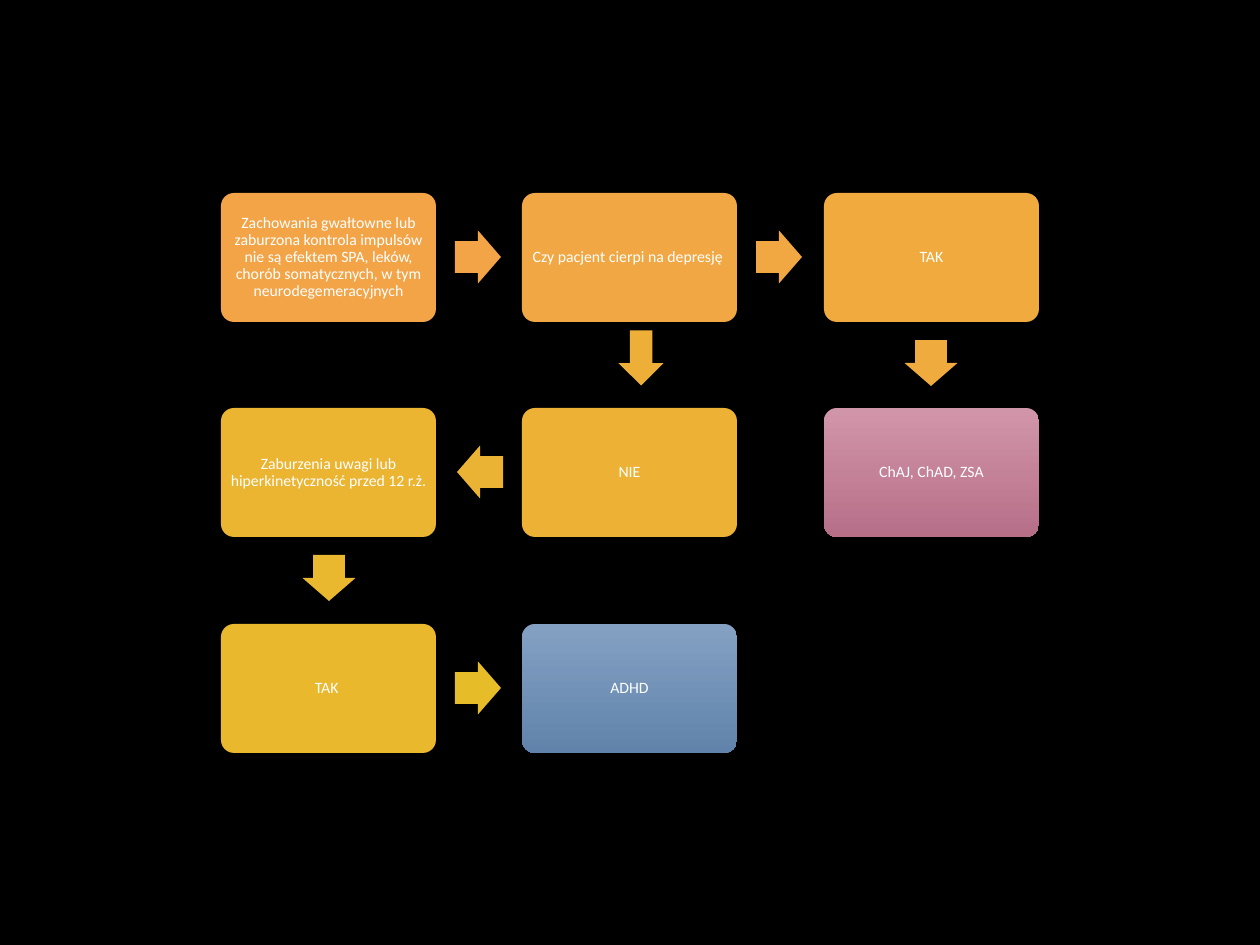
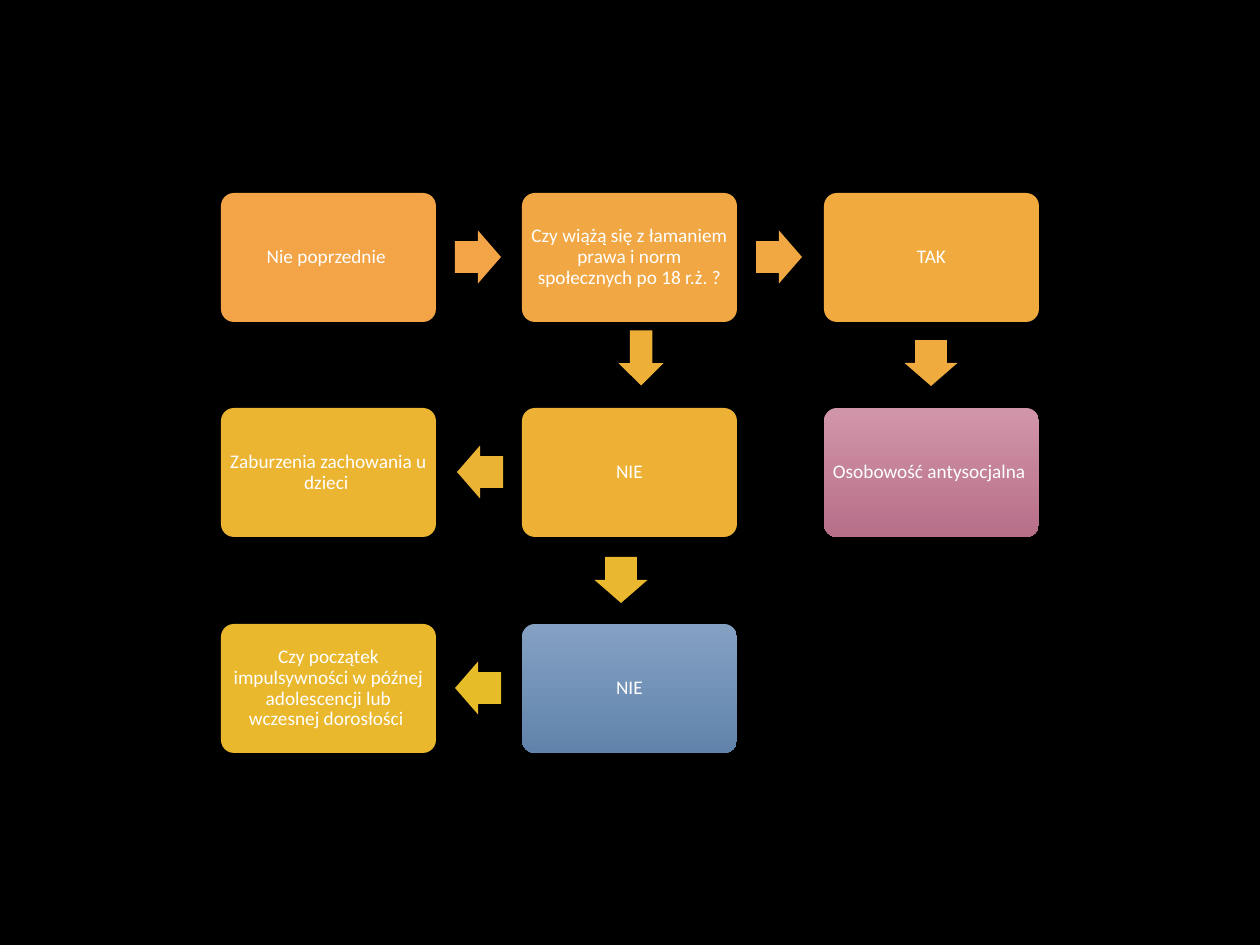
import pptx
import pptx.util
import pptx.dml.color
import pptx.enum.shapes
import pptx.enum.text

PX = 914400 / 126
MSO = pptx.enum.shapes.MSO_SHAPE
BOX_W, BOX_H = 215, 129
INSET = 5

BACKGROUND = "000000"
TEXT = "FFFFFF"
ROSE = ("D195A9", "B76F88")
BLUE = ("84A1C3", "6183AB")

# Column, row and fill of each step, in reading order of the flow.
STEPS = [
    (0, 0, "F3A447"), (1, 0, "F1A743"), (2, 0, "F0AA3E"), (2, 1, ROSE),
    (1, 1, "EDB135"), (0, 1, "EBB431"), (0, 2, "E9B82D"), (1, 2, BLUE),
]

# Centre x, centre y, rotation and fill of the arrows on both slides.
ARROWS = [
    (478, 257, 0, "F3A447"), (779, 257, 0, "F1A742"),
    (931, 363, 90, "EFAB3D"), (480, 472, 180, "EBB333"),
]

FLOWS = [
    {
        "size": 9,
        "texts": [
            "Zachowania gwałtowne lub zaburzona kontrola impulsów nie są "
            "efektem SPA, leków, chorób somatycznych, w tym "
            "neurodegemeracyjnych",
            "Czy pacjent cierpi na depresję ",
            "TAK",
            "ChAJ, ChAD, ZSA",
            "NIE",
            "Zaburzenia uwagi lub hiperkinetyczność przed 12 r.ż. ",
            "TAK ",
            "ADHD",
        ],
        "arrows": [(329, 578, 90, "E9B82E"), (478, 688, 0, "E7BC29")],
    },
    {
        "size": 11,
        "texts": [
            "Nie poprzednie ",
            "Czy wiążą się z łamaniem prawa i norm społecznych po 18 r.ż. ?",
            "TAK",
            "Osobowość antysocjalna ",
            "NIE",
            "Zaburzenia zachowania u dzieci ",
            "Czy początek impulsywności w późnej adolescencji lub wczesnej "
            "dorosłości ",
            "NIE",
        ],
        "arrows": [(621, 580, 90, "E9B82E"), (478, 688, 180, "E7BC29")],
    },
]


def px(n):
    return pptx.util.Emu(round(n * PX))


def rgb(value):
    return pptx.dml.color.RGBColor.from_string(value)


def set_all(obj, values):
    for name, value in values.items():
        setattr(obj, name, value)


def paint(fill, colour):
    """Fill with one hex colour, or with a (top, bottom) pair as a gradient."""
    if isinstance(colour, str):
        fill.solid()
        fill.fore_color.rgb = rgb(colour)
        return
    fill.gradient()
    fill.gradient_angle = 270
    for stop, position, value in zip(fill.gradient_stops, (0, 1), colour):
        stop.position = position
        stop.color.rgb = rgb(value)


def add_flat_shape(s, kind, x, y, w, h, colour):
    sp = s.shapes.add_shape(kind, px(x), px(y), px(w), px(h))
    sp.shadow.inherit = False
    sp.line.fill.background()
    paint(sp.fill, colour)
    return sp


def add_step(s, col, row, colour, text, size):
    x = 221 + col * 603 // 2
    y = 193 + row * 431 // 2
    sp = add_flat_shape(s, MSO.ROUNDED_RECTANGLE, x, y, BOX_W, BOX_H, colour)
    sp.adjustments[0] = 0.1
    tf = sp.text_frame
    set_all(tf, {
        "word_wrap": True,
        "vertical_anchor": pptx.enum.text.MSO_ANCHOR.MIDDLE,
        "margin_left": px(INSET),
        "margin_right": px(INSET),
        "margin_top": px(INSET),
        "margin_bottom": px(INSET),
    })
    p = tf.paragraphs[0]
    set_all(p, {"alignment": pptx.enum.text.PP_ALIGN.CENTER,
                "line_spacing": 0.9})
    r = p.add_run()
    r.text = text
    set_all(r.font, {"name": "Calibri", "size": pptx.util.Pt(size)})
    r.font.color.rgb = rgb(TEXT)


def add_arrow(s, cx, cy, rotation, colour, kind=MSO.RIGHT_ARROW,
              w=46, h=53, shaft=0.6):
    """Centre an arrow on (cx, cy) and turn it clockwise by rotation."""
    sp = add_flat_shape(s, kind, cx - w / 2, cy - h / 2, w, h, colour)
    sp.adjustments[0] = shaft
    sp.adjustments[1] = 0.5
    sp.rotation = rotation


def add_flow(prs, size, texts, arrows):
    s = prs.slides.add_slide(prs.slide_layouts[6])
    for (col, row, colour), text in zip(STEPS, texts):
        add_step(s, col, row, colour, text, size)
    for arrow in ARROWS + arrows:
        add_arrow(s, *arrow)
    add_arrow(s, 641, 358, 180, "EDAF38", MSO.UP_ARROW, 45, 55, 0.5)


def main():
    prs = pptx.Presentation()
    set_all(prs, {"slide_width": px(1260), "slide_height": px(945)})
    paint(prs.slide_master.background.fill, BACKGROUND)
    for flow in FLOWS:
        add_flow(prs, **flow)
    prs.save("out.pptx")


if __name__ == "__main__":
    main()
